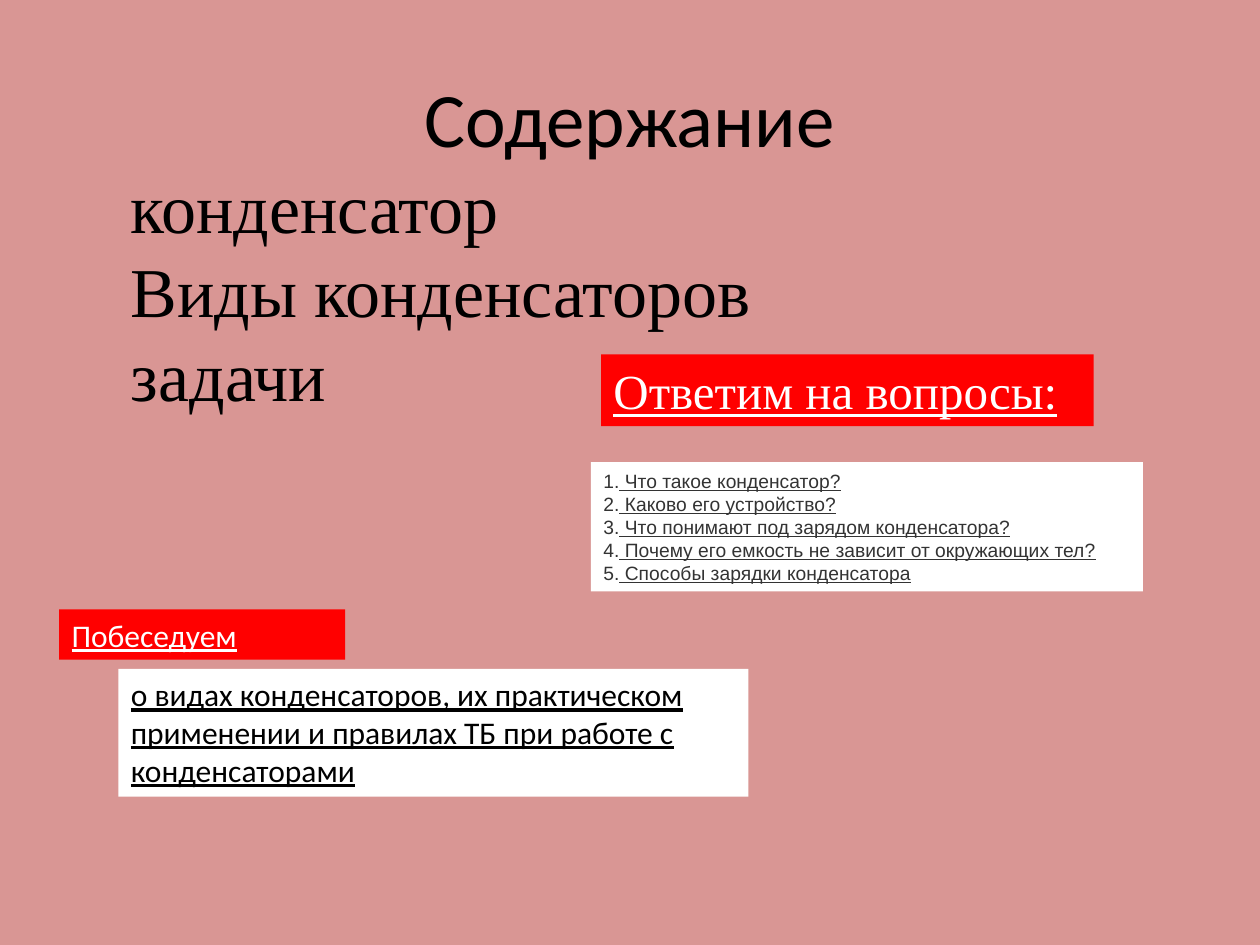
"""Builds the contents slide of a lesson on capacitors."""
from pptx import Presentation
from pptx.dml.color import RGBColor as Rgb
from pptx.enum.shapes import MSO_SHAPE as Kind
from pptx.enum.text import MSO_ANCHOR as Anchor, PP_ALIGN as Align
from pptx.util import Inches, Pt

WIDE, HIGH = 10, 7.5
HEX = {"rose": "D99694", "black": "000000", "grey": "333333",
       "white": "FFFFFF", "red": "FF0000"}
SANS, SERIF, PLAIN = "Calibri", "Times New Roman", "Arial"

TITLE = "Содержание"
TOPICS = ["конденсатор", "Виды конденсаторов", "задачи"]
ASK = "Ответим на вопросы:"
QUESTIONS = [
    "Что такое конденсатор?",
    "Каково его устройство?",
    "Что понимают под зарядом конденсатора?",
    "Почему его емкость не зависит от окружающих тел?",
    "Способы зарядки конденсатора",
]
TALK = "Побеседуем"
THEME = ("о видах конденсаторов, их практическом применении "
         "и правилах ТБ при работе с конденсаторами")

MID, TOP = Anchor.MIDDLE, Anchor.TOP
BOXES = [
    ((0.05, 0.04, 0.9, 0.167), None, MID, [[(TITLE, False)]], (SANS, 44, "black"), Align.CENTER),
    ((0.094, 0.167, 0.742, 0.283), None, TOP, [[(t, False)] for t in TOPICS],
     (SERIF, 40, "black"), Align.LEFT),
    ((0.469, 0.489, 0.438, 0.137), "white", MID,
     [[(f"{n}.", False), (f" {q}", True)] for n, q in enumerate(QUESTIONS, 1)],
     (PLAIN, 11, "grey"), Align.LEFT),
    ((0.094, 0.708, 0.5, 0.135), "white", TOP, [[(THEME, True)]], (SANS, 18, "black"), Align.LEFT),
    ((0.477, 0.375, 0.391, 0.076), "red", MID, [[(ASK, True)]], (SERIF, 28, "white"), Align.LEFT),
    ((0.047, 0.645, 0.227, 0.053), "red", TOP, [[(TALK, True)]], (SANS, 18, "white"), Align.LEFT),
]


def tint(name):
    return Rgb.from_string(HEX[name])


def add_box(slide, share, fill, anchor, lines, style, align):
    place = [Inches(s * size) for s, size in zip(share, (WIDE, HIGH) * 2)]
    if fill:
        box = slide.shapes.add_shape(Kind.RECTANGLE, *place)
        box.shadow.inherit = False
        box.fill.solid()
        box.fill.fore_color.rgb = tint(fill)
        box.line.fill.background()
    else:
        box = slide.shapes.add_textbox(*place)
    frame = box.text_frame
    frame.word_wrap, frame.vertical_anchor = True, anchor
    face, size, color = style
    for i, runs in enumerate(lines):
        para = frame.add_paragraph() if i else frame.paragraphs[0]
        para.alignment = align
        font = para.font
        font.name, font.size, font.color.rgb = face, Pt(size), tint(color)
        for text, under in runs:
            run = para.add_run()
            run.text = text
            if under:
                run.font.underline = True


def main():
    deck = Presentation()
    deck.slide_width, deck.slide_height = Inches(WIDE), Inches(HIGH)
    slide = deck.slides.add_slide(deck.slide_layouts[6])
    back = slide.background.fill
    back.solid()
    back.fore_color.rgb = tint("rose")
    for box in BOXES:
        add_box(slide, *box)
    deck.save("out.pptx")


if __name__ == "__main__":
    main()
